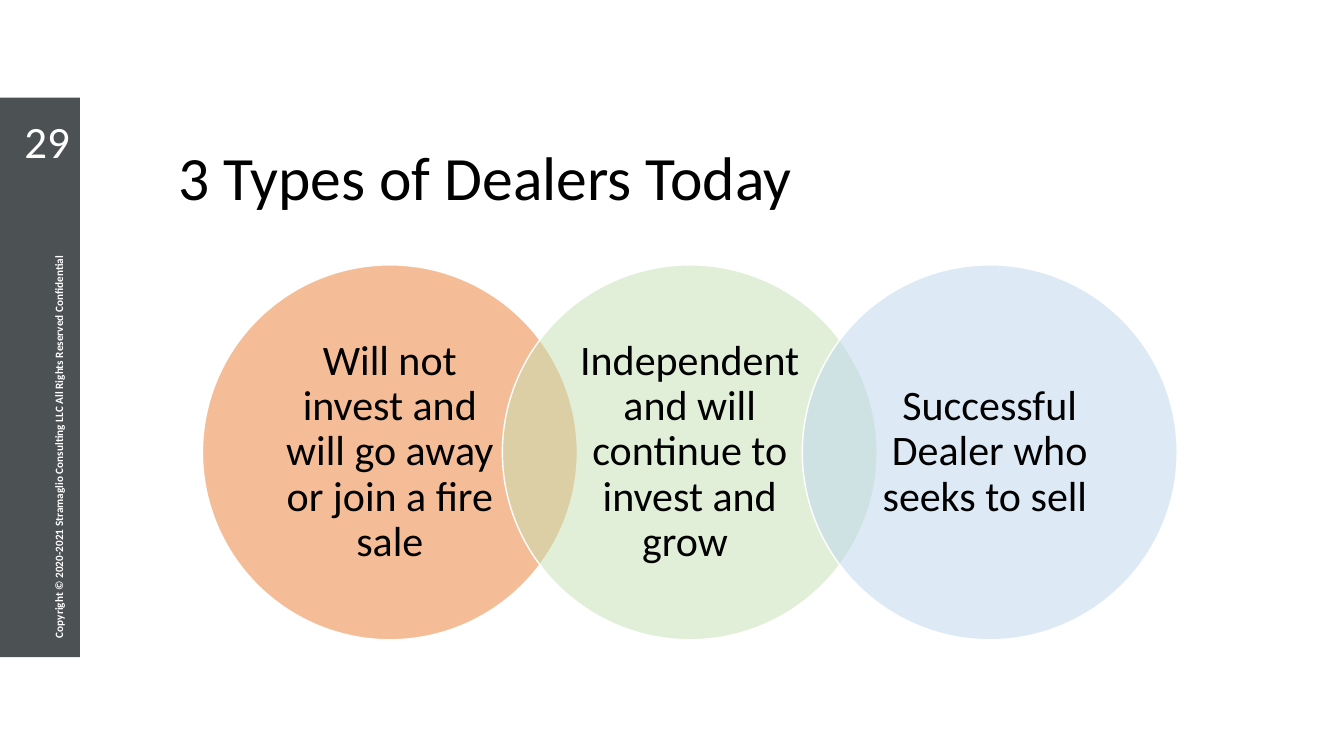
from lxml.etree import SubElement
from pptx import Presentation
from pptx.dml.color import RGBColor
from pptx.enum.shapes import MSO_SHAPE
from pptx.enum.text import MSO_ANCHOR, MSO_AUTO_SIZE, PP_ALIGN
from pptx.oxml.ns import qn
from pptx.util import Pt

TITLE = "3 Types of Dealers Today"
PAGE = "29"
COPYRIGHT = "Copyright © 2020-2021 Stramaglio Consulting LLC All Rights Reserved Confidential"
DEALERS = [
    ("Will not invest and will go away or join a fire sale", "ED7D31"),
    ("Independent and will continue to invest and grow ", "C5E0B4"),
    ("Successful Dealer who seeks to sell  ", "BDD7EE"),
]

BLACK, WHITE, SLATE = "000000", "FFFFFF", "4C5254"
BAR_TOP, BAR_WIDTH, BAR_HEIGHT = 69.8, 57, 399.6
CIRCLE_LEFT, CIRCLE_TOP, DIAMETER = 144.6, 189.2, 267.8
STEP = DIAMETER * 0.8

TITLE_FORMAT = {"size": Pt(44), "bold": False}
PAGE_FORMAT = {"size": Pt(32), "bold": False}
COPYRIGHT_FORMAT = {"size": Pt(8), "bold": True}
DEALER_FORMAT = {"size": Pt(30), "bold": False}
DEALER_MARGINS = {
    "margin_left": Pt(15), "margin_right": Pt(15),
    "margin_top": Pt(3), "margin_bottom": Pt(3),
}


def apply(target, values):
    for name, value in values.items():
        setattr(target, name, value)


def paint(color_format, color):
    color_format.rgb = RGBColor.from_string(color)


def write(holder, text, font_format, color, align, anchor, spacing=0.9, margins={}):
    frame = holder.text_frame
    apply(frame, {"text": text, "word_wrap": True, "auto_size": MSO_AUTO_SIZE.NONE,
                  "vertical_anchor": anchor, **margins})
    paragraph = frame.paragraphs[0]
    apply(paragraph, {"alignment": align, "line_spacing": spacing})
    font = paragraph.runs[0].font
    apply(font, {"name": "Calibri", **font_format})
    paint(font.color, color)


def add_filled(shapes, kind, box, color):
    shape = shapes.add_shape(kind, *map(Pt, box))
    shape.shadow.inherit = False
    shape.fill.solid()
    paint(shape.fill.fore_color, color)
    return shape


def add_dealer(shapes, index, text, color):
    box = (CIRCLE_LEFT + index * STEP, CIRCLE_TOP, DIAMETER, DIAMETER)
    circle = add_filled(shapes, MSO_SHAPE.OVAL, box, color)
    fill_color = circle.fill._xPr.find(qn("a:solidFill"))[0]
    SubElement(fill_color, qn("a:alpha"), val="50000")
    paint(circle.line.color, WHITE)
    circle.line.width = Pt(1)
    write(circle, text, DEALER_FORMAT, BLACK, PP_ALIGN.CENTER, MSO_ANCHOR.MIDDLE,
          margins=DEALER_MARGINS)


def main():
    deck = Presentation()
    apply(deck, {"slide_width": Pt(960), "slide_height": Pt(540)})
    slide = deck.slides.add_slide(deck.slide_layouts[5])
    shapes = slide.shapes

    title = shapes.title
    apply(title, {"left": Pt(120.2), "top": Pt(82.8), "width": Pt(745.2), "height": Pt(92.9)})
    write(title, TITLE, TITLE_FORMAT, BLACK, PP_ALIGN.LEFT, MSO_ANCHOR.MIDDLE)

    bar = add_filled(shapes, MSO_SHAPE.RECTANGLE, (0, BAR_TOP, BAR_WIDTH, BAR_HEIGHT), SLATE)
    bar.line.fill.background()

    page = shapes.add_textbox(Pt(0), Pt(77), Pt(BAR_WIDTH), Pt(47.5))
    write(page, PAGE, PAGE_FORMAT, WHITE, PP_ALIGN.RIGHT, MSO_ANCHOR.MIDDLE, spacing=1.0)

    notice = shapes.add_textbox(Pt(-123.8), Pt(288.7), Pt(332.6), Pt(15.8))
    notice.rotation = 270
    write(notice, COPYRIGHT, COPYRIGHT_FORMAT, WHITE, PP_ALIGN.LEFT, MSO_ANCHOR.BOTTOM)

    for index, (text, color) in enumerate(DEALERS):
        add_dealer(shapes, index, text, color)

    deck.save("out.pptx")


if __name__ == "__main__":
    main()
